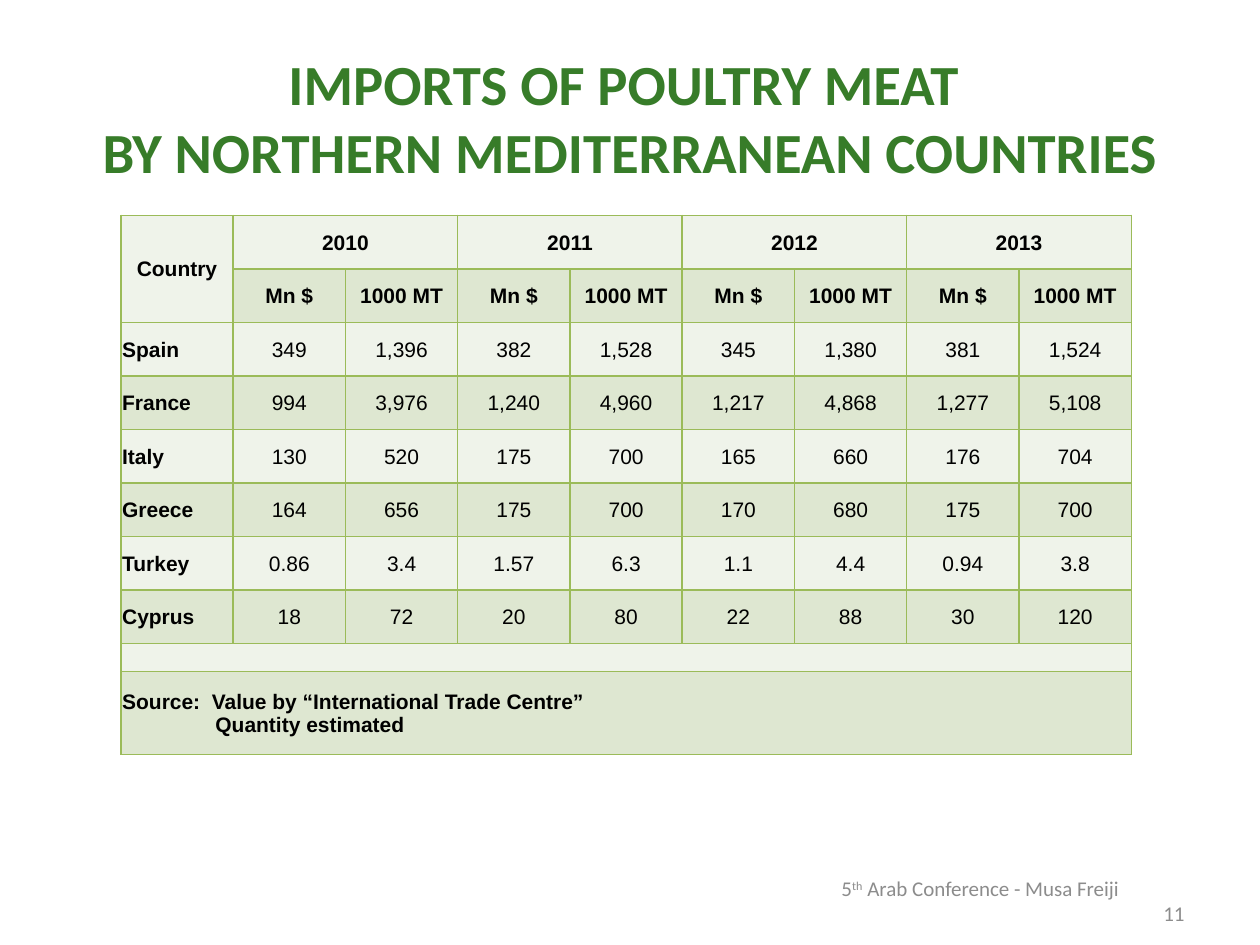
"""Build the slide on poultry meat imports by northern Mediterranean countries."""
from typing import NamedTuple

from lxml import etree
from pptx import Presentation, util as u
from pptx.dml.color import RGBColor
from pptx.enum import text
from pptx.oxml.ns import qn

WIDTH, HEIGHT = u.Inches(10), u.Inches(7.5)
GREEN = RGBColor(0x37, 0x7C, 0x29)
GRAY = RGBColor(0x8C, 0x8C, 0x8C)
BLACK = RGBColor(0, 0, 0)
BORDER = RGBColor(0x9B, 0xBB, 0x59)
BANDS = RGBColor(0xEF, 0xF3, 0xEA), RGBColor(0xDE, 0xE7, 0xD1)
CENTER, LEFT, RIGHT = text.PP_ALIGN.CENTER, text.PP_ALIGN.LEFT, text.PP_ALIGN.RIGHT
MIDDLE = text.MSO_ANCHOR.MIDDLE


class Area(NamedTuple):
    """A rectangle in shares of the slide's size."""
    left: float
    top: float
    width: float
    height: float

    def lengths(self) -> tuple[int, int, int, int]:
        return (int(self.left * WIDTH), int(self.top * HEIGHT),
                int(self.width * WIDTH), int(self.height * HEIGHT))


class Country(NamedTuple):
    """Imports of one country, as value and quantity for each year."""
    name: str
    figures: tuple[str, ...]


TITLE_AREA = Area(0.05, 0.04, 0.9, 1 / 6)
TABLE_AREA = Area(0.096, 0.228, 0.802, 0.57)
FOOTER_AREA = Area(0.658, 0.927, 0.292, 0.053)
YEARS = "2010", "2011", "2012", "2013"
UNITS = "Mn $", "1000 MT"
COUNTRIES = (
    Country("Spain", ("349", "1,396", "382", "1,528", "345", "1,380", "381", "1,524")),
    Country("France", ("994", "3,976", "1,240", "4,960", "1,217", "4,868", "1,277", "5,108")),
    Country("Italy", ("130", "520", "175", "700", "165", "660", "176", "704")),
    Country("Greece", ("164", "656", "175", "700", "170", "680", "175", "700")),
    Country("Turkey", ("0.86", "3.4", "1.57", "6.3", "1.1", "4.4", "0.94", "3.8")),
    Country("Cyprus", ("18", "72", "20", "80", "22", "88", "30", "120")),
)
SOURCE = "Source:  Value by “International Trade Centre”\nQuantity estimated"
COLUMNS = 1 + len(YEARS) * len(UNITS)
BLANK_ROW = 2 + len(COUNTRIES)
SOURCE_ROW = BLANK_ROW + 1
ROW_HEIGHTS = [0.425] * BLANK_ROW + [0.22, 0.66]


def format_span(span, font: str, size: float, color: RGBColor, bold: bool = False) -> None:
    """Set the look of one run."""
    span.font.name = font
    span.font.size = u.Pt(size)
    span.font.color.rgb = color
    span.font.bold = bold


def add_title(page) -> None:
    """Fill and format the title placeholder."""
    title = page.shapes.title
    title.left, title.top, title.width, title.height = TITLE_AREA.lengths()
    frame = title.text_frame
    frame.text = "IMPORTS OF POULTRY MEAT \vBY NORTHERN MEDITERRANEAN COUNTRIES"
    frame.auto_size = text.MSO_AUTO_SIZE.NONE
    frame.vertical_anchor = MIDDLE
    para = frame.paragraphs[0]
    para.alignment = CENTER
    para._p.get_or_add_pPr().set("rtl", "1")
    for span in para.runs:
        format_span(span, "Calibri", 32.4, GREEN, True)


def style_cell(cell, row: int) -> None:
    """Give a cell its band colour, margins and four borders."""
    cell.fill.solid()
    cell.fill.fore_color.rgb = BANDS[row % 2]
    cell.vertical_anchor = MIDDLE
    cell.margin_left = cell.margin_right = cell.margin_top = u.Inches(0.01)
    cell.margin_bottom = 0
    properties = cell._tc.get_or_add_tcPr()
    for place, side in enumerate(("a:lnL", "a:lnR", "a:lnT", "a:lnB")):
        line = etree.Element(qn(side), w=str(u.Pt(1)))
        fill = etree.SubElement(line, qn("a:solidFill"))
        etree.SubElement(fill, qn("a:srgbClr"), val=str(BORDER))
        properties.insert(place, line)


def write_cell(cell, words: str, alignment, bold: bool) -> None:
    """Put formatted text into a cell."""
    cell.text_frame.text = words
    for para in cell.text_frame.paragraphs:
        para.alignment = alignment
        for span in para.runs:
            format_span(span, "Arial", 12, BLACK, bold)


def add_imports_table(page) -> None:
    """Draw the table of imports by country and year."""
    frame = page.shapes.add_table(len(ROW_HEIGHTS), COLUMNS, *TABLE_AREA.lengths())
    table = frame.table
    table.first_row = table.horz_banding = False
    for row, height in enumerate(ROW_HEIGHTS):
        table.rows[row].height = u.Inches(height)
        for column in range(COLUMNS):
            style_cell(table.cell(row, column), row)

    table.cell(0, 0).merge(table.cell(1, 0))
    write_cell(table.cell(0, 0), "Country", CENTER, True)
    for index, year in enumerate(YEARS):
        first = 1 + index * len(UNITS)
        table.cell(0, first).merge(table.cell(0, first + len(UNITS) - 1))
        write_cell(table.cell(0, first), year, CENTER, True)
        for offset, unit in enumerate(UNITS):
            write_cell(table.cell(1, first + offset), unit, CENTER, True)

    for row, country in enumerate(COUNTRIES, 2):
        write_cell(table.cell(row, 0), country.name, LEFT, True)
        for column, figure in enumerate(country.figures, 1):
            write_cell(table.cell(row, column), figure, CENTER, False)

    for row in (BLANK_ROW, SOURCE_ROW):
        table.cell(row, 0).merge(table.cell(row, COLUMNS - 1))
    for column in range(COLUMNS):
        blank = table.cell(BLANK_ROW, column).text_frame.paragraphs[0]
        etree.SubElement(blank._p, qn("a:endParaRPr"), sz="1200")
    source = table.cell(SOURCE_ROW, 0)
    write_cell(source, SOURCE, LEFT, True)
    indent = source.text_frame.paragraphs[1]._p.get_or_add_pPr()
    indent.set("marL", str(u.Inches(0.74)))


def add_footer(page) -> None:
    """Write the conference name and the page number."""
    frame = page.shapes.add_textbox(*FOOTER_AREA.lengths()).text_frame
    frame.word_wrap = True
    frame.vertical_anchor = MIDDLE
    conference, number = frame.paragraphs[0], frame.add_paragraph()
    for words in ("5", "th", " Arab Conference - Musa Freiji"):
        conference.add_run().text = words
    number.text = "11"
    number.alignment = RIGHT
    for span in conference.runs + number.runs:
        format_span(span, "Calibri", 12, GRAY)
    conference.runs[1].font._element.set("baseline", "30000")


def main() -> None:
    """Build and save the deck."""
    deck = Presentation()
    deck.slide_width, deck.slide_height = WIDTH, HEIGHT
    page = deck.slides.add_slide(deck.slide_layouts[5])
    add_title(page)
    add_imports_table(page)
    add_footer(page)
    deck.save("out.pptx")


if __name__ == "__main__":
    main()
